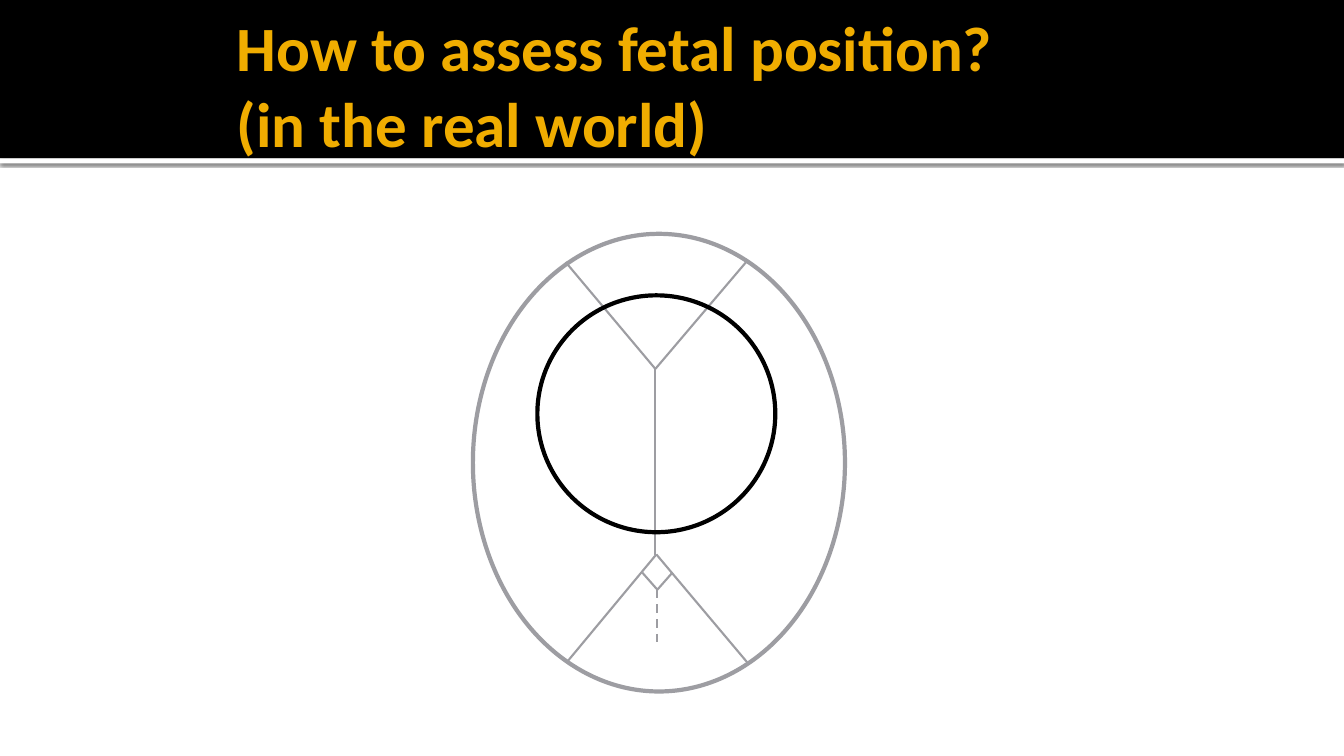
from dataclasses import dataclass

from lxml.etree import SubElement
from pptx import Presentation
from pptx.dml.color import RGBColor
from pptx.enum.dml import MSO_LINE
from pptx.enum.shapes import MSO_CONNECTOR, MSO_SHAPE
from pptx.enum.text import MSO_ANCHOR, PP_ALIGN
from pptx.oxml.ns import qn
from pptx.util import Inches, Pt


@dataclass(frozen=True)
class Theme:
    """Colours, font and sizes of the slide."""
    white: str = "FFFFFF"
    black: str = "000000"
    gold: str = "F0AD00"
    grey: str = "9D9DA2"
    font: str = "Calibri"
    title_size: float = 45
    outline: float = 3
    suture: float = 1.5


class SlideBuilder:
    """Draws each kind of element on the current slide."""

    def __init__(self, slide, theme):
        self.slide = slide
        self.theme = theme

    def band(self, top, height, color):
        """Add a full-width filled band."""
        band = self.slide.shapes.add_shape(
            MSO_SHAPE.RECTANGLE, 0, Inches(top), Inches(13.33), Inches(height))
        band.shadow.inherit = False
        band.fill.solid()
        band.fill.fore_color.rgb = RGBColor.from_string(color)
        band.line.fill.background()
        return band

    def shadow(self, band):
        """Give a band a soft shadow falling straight down."""
        effects = band.element.spPr.find(qn("a:effectLst"))
        outer = SubElement(effects, qn("a:outerShdw"), blurRad=str(Pt(2.5)),
                           dist=str(Pt(0.8)), dir="5400000", rotWithShape="0")
        tint = SubElement(outer, qn("a:srgbClr"), val=self.theme.black)
        SubElement(tint, qn("a:alpha"), val="60000")

    def title(self, lines, left, top, width, height):
        """Add the heading with one run for each line."""
        heading = self.slide.shapes.add_textbox(*map(Inches, (left, top, width, height)))
        frame = heading.text_frame
        frame.word_wrap = True
        frame.vertical_anchor = MSO_ANCHOR.MIDDLE
        frame.margin_left = Inches(0.1)
        frame.margin_right = frame.margin_top = frame.margin_bottom = Inches(0.05)
        paragraph = frame.paragraphs[0]
        paragraph.alignment = PP_ALIGN.LEFT
        for index, line in enumerate(lines):
            if index:
                paragraph.add_line_break()
            run = paragraph.add_run()
            run.text = line
            run.font.name = self.theme.font
            run.font.size = Pt(self.theme.title_size)
            run.font.bold = True
            run.font.color.rgb = RGBColor.from_string(self.theme.gold)

    def group(self):
        """Add an empty group and return its shapes."""
        return self.slide.shapes.add_group_shape().shapes

    def ellipse(self, shapes, left, top, width, height, color):
        """Add an unfilled ellipse."""
        ring = shapes.add_shape(
            MSO_SHAPE.OVAL, *map(Inches, (left, top, width, height)))
        ring.shadow.inherit = False
        ring.fill.background()
        ring.line.color.rgb = RGBColor.from_string(color)
        ring.line.width = Pt(self.theme.outline)

    def suture(self, shapes, start, end, dashed=False):
        """Add a thin straight line between two points."""
        seam = shapes.add_connector(
            MSO_CONNECTOR.STRAIGHT, *map(Inches, (*start, *end)))
        seam.line.color.rgb = RGBColor.from_string(self.theme.grey)
        seam.line.width = Pt(self.theme.suture)
        if dashed:
            seam.line.dash_style = MSO_LINE.DASH
        SubElement(seam.element.spPr, qn("a:effectLst"))


def main():
    """Build and save the slide."""
    presentation = Presentation()
    presentation.slide_width = Inches(13.33)
    presentation.slide_height = Inches(7.5)
    theme = Theme()
    builder = SlideBuilder(
        presentation.slides.add_slide(presentation.slide_layouts[6]), theme)

    builder.shadow(builder.band(1.57, 0.05, theme.white))
    builder.band(0, 1.57, theme.black)
    builder.title(("How to assess fetal position?", "(in the real world)"),
                  2.25, 0, 8.17, 1.67)

    head = builder.group()
    builder.ellipse(head, 4.69, 2.32, 3.69, 4.54, theme.grey)
    upper_fontanelle, lower_fontanelle, occiput = (6.5, 3.66), (6.51, 5.5), (6.52, 5.85)
    branches = {
        upper_fontanelle: ((5.61, 2.6), (7.4, 2.6), (6.5, 5.51)),
        lower_fontanelle: ((5.63, 6.56), (7.41, 6.57)),
        occiput: ((6.37, 5.68), (6.67, 5.68)),
    }
    for junction, ends in branches.items():
        for end in ends:
            builder.suture(head, end, junction)
    builder.suture(head, occiput, (6.52, 6.43), dashed=True)

    builder.ellipse(builder.slide.shapes, 5.33, 2.93, 2.36, 2.35, theme.black)
    presentation.save("out.pptx")


if __name__ == "__main__":
    main()
